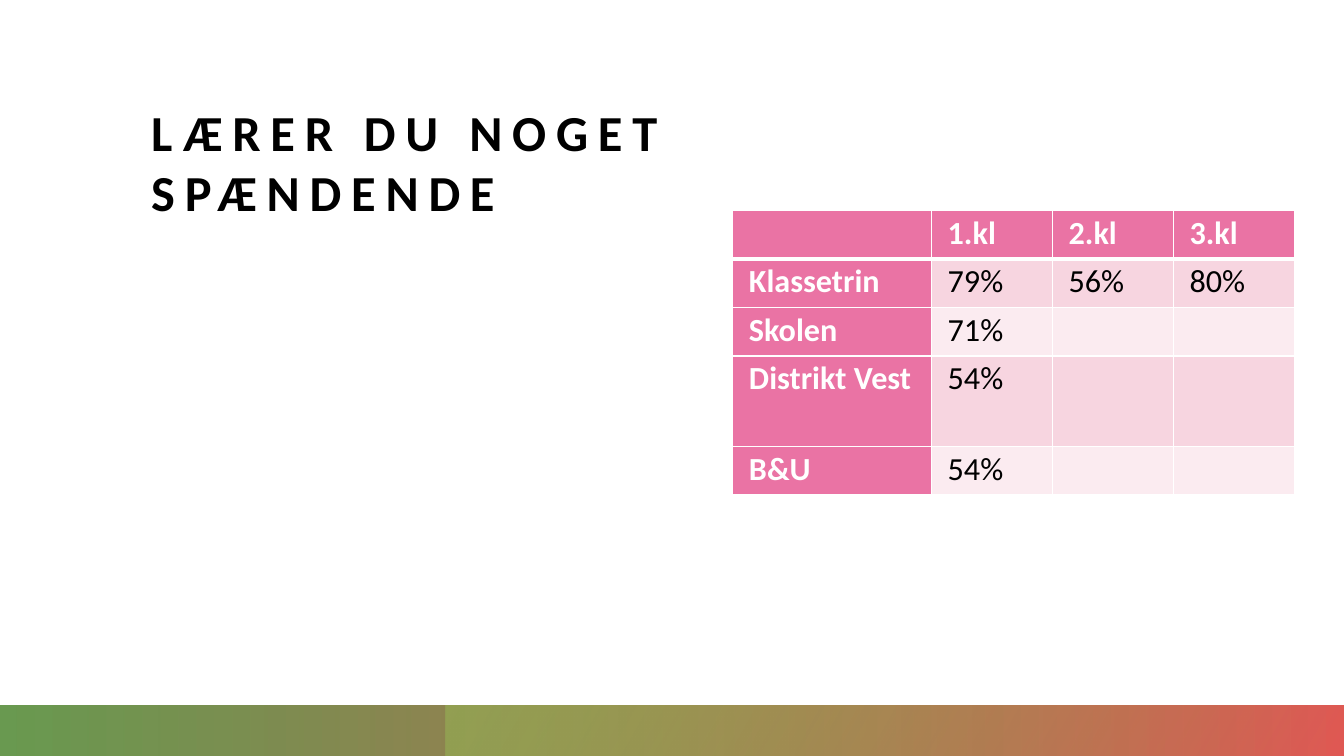
from lxml import etree
from pptx import Presentation, util as u
from pptx.dml.color import RGBColor
from pptx.enum import shapes, text
from pptx.oxml import ns

COLUMNS = 160  # square grid: 160 columns by 90 rows
SLIDE_SIZE = {"slide_width": u.Inches(13.333), "slide_height": u.Inches(7.5)}

WHITE, BLACK = "FFFFFF", "000000"
PINK, ROSE, BLUSH = "EA73A4", "F7D5E0", "FBEBF0"
RED, GREEN, OLIVE = "E55454", "4F8832", "95AB54"


def color(value):
    return RGBColor.from_string(value)


def set_attributes(target, values):
    for name, value in values.items():
        setattr(target, name, value)


def add_xml(parent, tag, **attributes):
    return etree.SubElement(parent, ns.qn(tag), attributes)


class SlideBuilder:
    font = "Calibri"

    def __init__(self, presentation):
        self.unit = presentation.slide_width / COLUMNS
        self.slide = presentation.slides.add_slide(presentation.slide_layouts[6])

    def grid(self, *lengths):
        return [round(length * self.unit) for length in lengths]

    def add_text(self, paragraph, content, size, fill, bold):
        run = paragraph.add_run()
        run.text = content
        set_attributes(run.font, {"name": self.font, "size": u.Pt(size), "bold": bold})
        run.font.color.rgb = color(fill)
        return run

    def title(self, content, *box):
        frame = self.slide.shapes.add_textbox(*self.grid(*box)).text_frame
        set_attributes(frame, {
            "word_wrap": True, "vertical_anchor": text.MSO_ANCHOR.BOTTOM,
            "margin_left": 0, "margin_right": 0, "margin_top": 0, "margin_bottom": 0,
        })
        run = self.add_text(frame.paragraphs[0], content, 36, BLACK, True)
        run._r.get_or_add_rPr().set("spc", "700")

    def gradient_bar(self, box, angle, stops):
        """Mirrored bar; each stop is (position %, colour, opacity %)."""
        shape = self.slide.shapes.add_shape(shapes.MSO_SHAPE.RECTANGLE, *self.grid(*box))
        shape.shadow.inherit = False
        shape.line.fill.background()
        properties = shape._element.spPr
        properties.find(ns.qn("a:xfrm")).set("flipH", "1")
        gradient = etree.Element(ns.qn("a:gradFill"), rotWithShape="1")
        stop_list = add_xml(gradient, "a:gsLst")
        for position, value, opacity in stops:
            stop = add_xml(stop_list, "a:gs", pos=str(position * 1000))
            tone = add_xml(stop, "a:srgbClr", val=value)
            add_xml(tone, "a:alpha", val=str(opacity * 1000))
        add_xml(gradient, "a:lin", ang=str(angle * 60000), scaled="0")
        properties.find(ns.qn("a:prstGeom")).addnext(gradient)

    def borders(self, cell, row):
        widths = {"L": 1, "R": 1, "T": 3 if row == 1 else 1, "B": 3 if row == 0 else 1}
        for side, width in widths.items():
            line = add_xml(cell._tc.get_or_add_tcPr(), f"a:ln{side}", w=str(int(u.Pt(width))))
            add_xml(add_xml(line, "a:solidFill"), "a:srgbClr", val=WHITE)

    def table(self, left, top, widths, heights, rows):
        box = self.grid(left, top, sum(widths), sum(heights))
        table = self.slide.shapes.add_table(len(heights), len(widths), *box).table
        for column, width in zip(table.columns, self.grid(*widths)):
            column.width = width
        for row, height in zip(table.rows, self.grid(*heights)):
            row.height = height
        for row, contents in enumerate(rows):
            for column, content in enumerate(contents):
                cell = table.cell(row, column)
                heading = row == 0 or column == 0
                self.borders(cell, row)
                cell.fill.solid()
                cell.fill.fore_color.rgb = color(PINK if heading else ROSE if row % 2 else BLUSH)
                if content:
                    set_attributes(cell, {
                        "margin_left": u.Inches(0.16), "margin_right": u.Inches(0.16),
                        "margin_top": 0, "margin_bottom": 0,
                    })
                    paragraph = cell.text_frame.paragraphs[0]
                    set_attributes(paragraph, {"line_spacing": 1.07, "space_after": u.Pt(8)})
                    self.add_text(paragraph, content, 23, WHITE if heading else BLACK, heading)


def main():
    presentation = Presentation()
    set_attributes(presentation, SLIDE_SIZE)
    builder = SlideBuilder(presentation)

    # Title
    builder.title("LÆRER DU NOGET SPÆNDENDE", 18, 6, 64.44, 20.4)

    # Bottom band
    builder.gradient_bar((0, 84, 160, 6), 0, [(0, RED, 100), (100, GREEN, 85)])
    builder.gradient_bar((53, 84, 107, 5.9), 330, [(0, OLIVE, 5), (99, OLIVE, 72)])

    # Results by class
    builder.table(
        87.25, 25.1, [23.66] + [14.4] * 3, [5.76] * 3 + [10.8, 5.76],
        [
            ("", "1.kl", "2.kl", "3.kl"),
            ("Klassetrin", "79%", "56%", "80%"),
            ("Skolen", "71%", "", ""),
            ("Distrikt Vest", "54%", "", ""),
            ("B&U", "54%", "", ""),
        ],
    )

    presentation.save("out.pptx")


if __name__ == "__main__":
    main()
